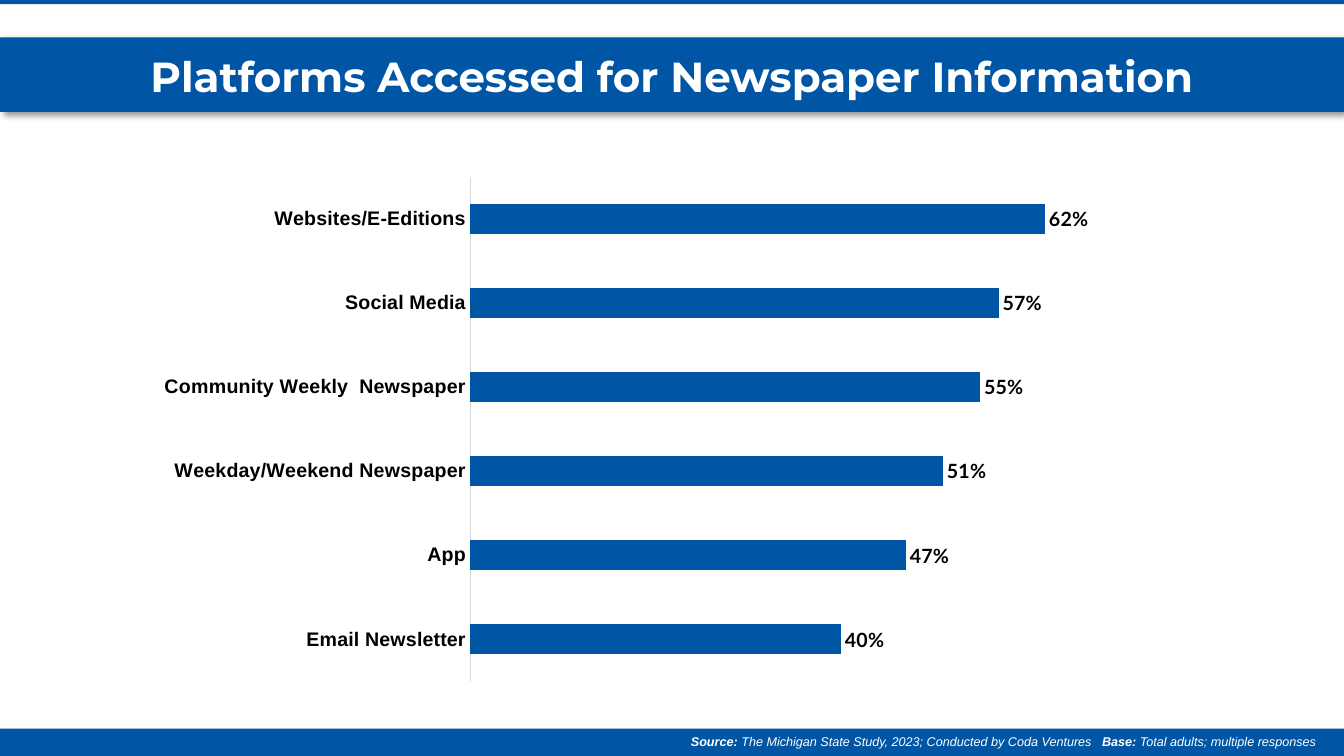
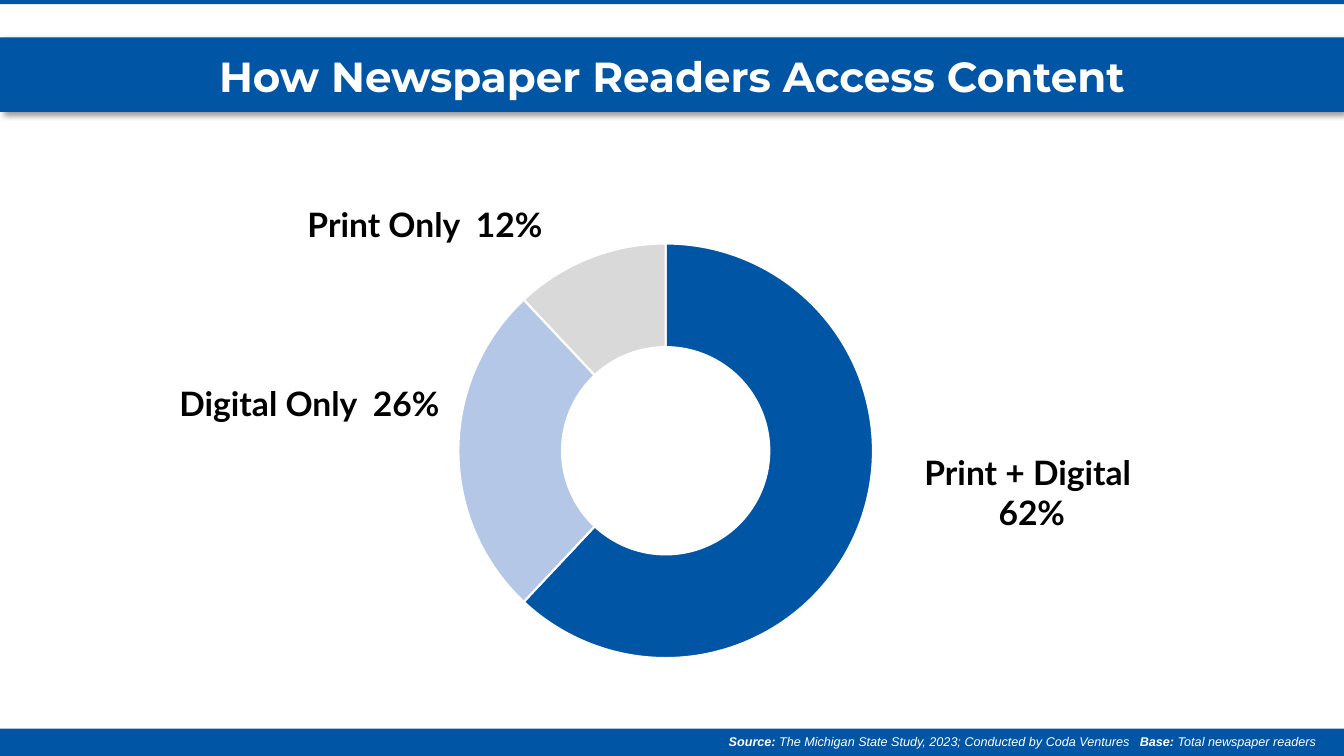
from lxml.etree import SubElement
from pptx import Presentation
from pptx.chart.data import CategoryChartData
from pptx.dml.color import RGBColor
from pptx.enum.chart import XL_CHART_TYPE, XL_LABEL_POSITION, XL_TICK_MARK
from pptx.enum.shapes import MSO_SHAPE
from pptx.enum.text import MSO_ANCHOR, PP_ALIGN
from pptx.oxml import parse_xml
from pptx.oxml.ns import nsdecls, qn
from pptx.util import Pt

BLUE = "0055A5"
LIGHT_BLUE = "B4C7E7"
GREY = "D9D9D9"
WHITE = "FFFFFF"
BLACK = "000000"

SLIDE_WIDTH = 960
SLIDE_HEIGHT = 540
STUDY = " The Michigan State Study, 2023; Conducted by Coda Ventures   "


def color(hex_string):
    """Return the colour for a hex string."""
    return RGBColor.from_string(hex_string)


def fill_solid(fill, hex_string):
    """Give a fill one solid colour."""
    fill.solid()
    fill.fore_color.rgb = color(hex_string)


def style_font(font, name, size, hex_string, bold=False, italic=False):
    """Set the look of a font."""
    font.name = name
    font.size = Pt(size)
    font.color.rgb = color(hex_string)
    font.bold = bold
    font.italic = italic


def add_band(slide, top, height):
    """Add a blue band across the whole slide."""
    band = slide.shapes.add_shape(
        MSO_SHAPE.RECTANGLE, 0, Pt(top), Pt(SLIDE_WIDTH), Pt(height))
    fill_solid(band.fill, BLUE)
    band.line.fill.background()
    band.shadow.inherit = False
    return band


def add_drop_shadow(shape):
    """Give a shape a soft shadow to its lower right."""
    effects = shape._element.spPr.find(qn("a:effectLst"))
    shadow = SubElement(
        effects, qn("a:outerShdw"), blurRad=str(Pt(4)), dist=str(Pt(3)),
        dir="2700000", algn="tl", rotWithShape="0")
    shade = SubElement(shadow, qn("a:srgbClr"), val=BLACK)
    SubElement(shade, qn("a:alpha"), val="40000")


def add_text(slide, box, runs, alignment, anchor=MSO_ANCHOR.TOP):
    """Add a text box of one paragraph from (text, font settings) pairs."""
    text_box = slide.shapes.add_textbox(*map(Pt, box))
    text_frame = text_box.text_frame
    text_frame.word_wrap = True
    text_frame.vertical_anchor = anchor
    paragraph = text_frame.paragraphs[0]
    paragraph.alignment = alignment
    for text, settings in runs:
        run = paragraph.add_run()
        run.text = text
        style_font(run.font, *settings)


def add_framed_slide(presentation, title, base):
    """Add a slide with its bands, title and source line."""
    slide = presentation.slides.add_slide(presentation.slide_layouts[6])
    add_band(slide, 520.5, 19.5)
    add_band(slide, -0.75, 3.75)
    heading = ("Arial", 9, WHITE, True, True)
    detail = ("Arial", 9, WHITE, False, True)
    add_text(slide, (314, 520.5, 633, 18),
             [("Source:", heading), (STUDY, detail),
              ("Base:", heading), (f" {base}", detail)], PP_ALIGN.RIGHT)
    add_drop_shadow(add_band(slide, 26.75, 53.25))
    add_text(slide, (0, 15, SLIDE_WIDTH, 60.5),
             [(title, ("Montserrat", 30, WHITE, True))],
             PP_ALIGN.CENTER, MSO_ANCHOR.BOTTOM)
    return slide


def add_chart(slide, chart_type, box, values, number_format, font_name):
    """Add a one-series chart without title or legend."""
    data = CategoryChartData(number_format=number_format)
    data.categories = list(values)
    data.add_series("Series 1", list(values.values()))
    chart = slide.shapes.add_chart(chart_type, *map(Pt, box), data).chart
    chart.has_title = False
    chart.has_legend = False
    style_font(chart.font, font_name, 10, BLACK)
    return chart


def set_plot_layout(chart, left, top, width, height):
    """Place the inner plot area by fractions of the chart."""
    plot_area = chart._chartSpace.chart.plotArea
    for layout in plot_area.findall(qn("c:layout")):
        plot_area.remove(layout)
    plot_area.insert(0, parse_xml(
        f'<c:layout {nsdecls("c")}><c:manualLayout>'
        '<c:layoutTarget val="inner"/>'
        '<c:xMode val="edge"/><c:yMode val="edge"/>'
        f'<c:x val="{left}"/><c:y val="{top}"/>'
        f'<c:w val="{width}"/><c:h val="{height}"/>'
        '</c:manualLayout></c:layout>'))


def add_bar_chart(slide, box, values):
    """Add a horizontal bar chart with percentage labels."""
    chart = add_chart(slide, XL_CHART_TYPE.BAR_CLUSTERED, box, values,
                      "0%", "Lato")
    set_plot_layout(chart, 0.41, 0.04, 0.53, 0.95)
    category_axis = chart.category_axis
    category_axis.major_tick_mark = XL_TICK_MARK.NONE
    category_axis.format.line.color.rgb = color(GREY)
    category_axis.format.line.width = Pt(0.75)
    style_font(category_axis.tick_labels.font, "Arial", 14, BLACK, True)
    value_axis = chart.value_axis
    value_axis.visible = False
    value_axis.has_major_gridlines = False
    value_axis.minimum_scale = 0
    value_axis.maximum_scale = 0.7

    plot = chart.plots[0]
    plot.gap_width = 182
    plot.vary_by_categories = False
    fill_solid(plot.series[0].format.fill, BLUE)
    plot.has_data_labels = True
    labels = plot.data_labels
    labels.show_value = True
    labels.number_format = "0%"
    labels.number_format_is_linked = False
    labels.position = XL_LABEL_POSITION.OUTSIDE_END
    style_font(labels.font, "Lato", 14, BLACK, True)


def add_doughnut_chart(slide, box, values, colors):
    """Add a doughnut chart with white gaps between its parts."""
    chart = add_chart(slide, XL_CHART_TYPE.DOUGHNUT, box, values,
                      "General", "Calibri")
    plot = chart.plots[0]
    plot.vary_by_categories = True
    plot.has_data_labels = False
    for index, hex_string in enumerate(colors):
        part = plot.series[0].points[index].format
        fill_solid(part.fill, hex_string)
        part.line.color.rgb = color(WHITE)
        part.line.width = Pt(1.5)


def build_platforms_slide(presentation):
    """Build the slide on the platforms accessed."""
    slide = add_framed_slide(
        presentation, "Platforms Accessed for Newspaper Information",
        "Total adults; multiple responses")
    add_bar_chart(slide, (-23, 111, 875, 379.5), {
        "Email Newsletter": 0.40,
        "App": 0.47,
        "Weekday/Weekend Newspaper": 0.51,
        "Community Weekly  Newspaper": 0.55,
        "Social Media": 0.57,
        "Websites/E-Editions": 0.62,
    })


def build_access_slide(presentation):
    """Build the slide on print and digital access."""
    slide = add_framed_slide(
        presentation, "How Newspaper Readers Access Content",
        "Total newspaper readers")
    add_doughnut_chart(slide, (238.5, 164, 474, 316),
                       {"1": 62, "2": 26, "3": 12}, (BLUE, LIGHT_BLUE, GREY))
    for text, box in (
            ("Print Only  12%", (177, 142, 253, 36)),
            ("Digital Only  26%", (119, 270, 204, 65.5)),
            ("Print + Digital  62%", (641.5, 319, 191, 65.5))):
        add_text(slide, box, [(text, ("Lato", 24, BLACK, True))],
                 PP_ALIGN.CENTER)


def main():
    """Build and save the presentation."""
    presentation = Presentation()
    presentation.slide_width = Pt(SLIDE_WIDTH)
    presentation.slide_height = Pt(SLIDE_HEIGHT)
    build_platforms_slide(presentation)
    build_access_slide(presentation)
    presentation.save("out.pptx")


if __name__ == "__main__":
    main()
